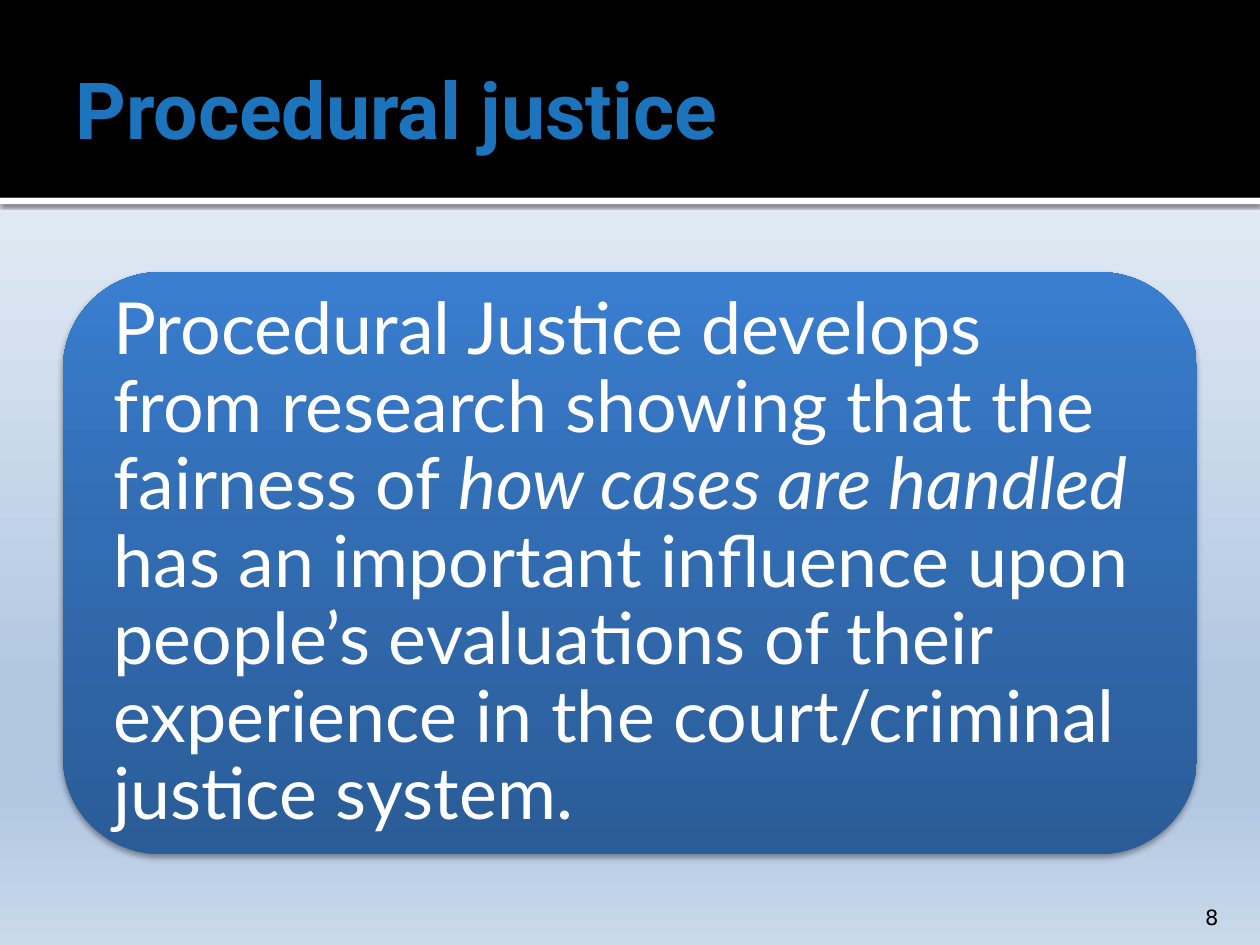
from pptx import Presentation
from pptx.dml.color import RGBColor as Rgb
from pptx.enum.shapes import MSO_SHAPE as Form
from pptx.enum.text import MSO_ANCHOR as Anchor, MSO_AUTO_SIZE as Size, PP_ALIGN as Align
from pptx.oxml import parse_xml
from pptx.oxml.ns import nsdecls, qn
from pptx.util import Inches, Pt


def color(code):
    return Rgb.from_string(code)


class Deck:
    white = "FFFFFF"
    black = "000000"
    blue = "1C75BC"

    def __init__(self):
        self.prs = Presentation()
        self.prs.slide_width = Inches(10)
        self.prs.slide_height = Inches(7.5)
        self.slide = self.prs.slides.add_slide(self.prs.slide_layouts[5])

    def blend(self, fill, node, stops, angle):
        fill.gradient()
        fill.gradient_angle = angle
        marks = "".join(
            f'<a:gs pos="{pos * 1000}"><a:srgbClr val="{code}"/></a:gs>'
            for pos, code in stops
        )
        grad = node.find(".//" + qn("a:gradFill"))
        grad.replace(
            grad.find(qn("a:gsLst")),
            parse_xml(f"<a:gsLst {nsdecls('a')}>{marks}</a:gsLst>"),
        )

    def back(self, stops, angle):
        self.blend(self.slide.background.fill, self.slide.element, stops, angle)

    def shape(self, form, box, fill=None, stops=None, angle=0, shade=None):
        item = self.slide.shapes.add_shape(form, *map(Inches, box))
        item.line.fill.background()
        item.shadow.inherit = False
        if stops:
            self.blend(item.fill, item.element, stops, angle)
        else:
            item.fill.solid()
            item.fill.fore_color.rgb = color(fill)
        if shade:
            alpha, blur, dist = shade
            item.element.spPr.find(qn("a:effectLst")).append(parse_xml(
                f'<a:outerShdw {nsdecls("a")} blurRad="{Pt(blur)}" '
                f'dist="{Pt(dist)}" dir="5400000" algn="t" rotWithShape="0">'
                f'<a:srgbClr val="{self.black}"><a:alpha val="{alpha * 1000}"/>'
                "</a:srgbClr></a:outerShdw>"
            ))

    def fill_text(self, item, runs, font, size, code, pads, anchor=Anchor.MIDDLE,
                  align=Align.LEFT, bold=False, space=1.0):
        frame = item.text_frame
        frame.word_wrap = True
        frame.auto_size = Size.NONE
        frame.vertical_anchor = anchor
        (frame.margin_left, frame.margin_top,
         frame.margin_right, frame.margin_bottom) = map(Inches, pads)
        para = frame.paragraphs[0]
        para.alignment = align
        para.line_spacing = space
        for words, slant in runs:
            run = para.add_run()
            run.text = words
            run.font.name = font
            run.font.size = Pt(size)
            run.font.bold = bold
            run.font.italic = slant
            run.font.color.rgb = color(code)

    def title(self, box, words, **style):
        item = self.slide.shapes.title
        item.left, item.top, item.width, item.height = map(Inches, box)
        item.element.getparent().append(item.element)
        self.fill_text(item, [(words, False)], **style)

    def text(self, box, runs, **style):
        item = self.slide.shapes.add_textbox(*map(Inches, box))
        self.fill_text(item, runs, **style)

    def save(self):
        self.prs.save("out.pptx")


def main():
    deck = Deck()
    deck.back([(0, "F6F9FC"), (74, "B0C6E1"), (83, "B0C6E1"), (100, "CAD9EB")], 270)
    deck.shape(Form.RECTANGLE, (0, 1.57, 10, 0.05), deck.white, shade=(60, 2.5, 0.8))
    deck.shape(Form.RECTANGLE, (0, 0, 10, 1.57), deck.black)
    deck.title((0.5, 0.17, 6.58, 1.37), "Procedural justice", font="Roboto",
               size=45, code=deck.blue, pads=(0.1, 0.05, 0.05, 0.05), bold=True)
    deck.shape(Form.ROUNDED_RECTANGLE, (0.5, 2.16, 9, 4.62), angle=90,
               stops=[(0, "2A5C97"), (55, "326CB2"), (100, "3A7ED0")],
               shade=(38, 3.1, 2))
    deck.text((0.73, 2.39, 8.55, 4.17), [
        ("Procedural Justice develops from research showing that the fairness of ", False),
        ("how cases are handled", True),
        (" has an important influence upon people’s evaluations of their "
         "experience in the court/criminal justice system.", False),
    ], font="Lato", size=41, code=deck.white, pads=(0.17,) * 4, space=0.9)
    deck.text((8.97, 7.08, 0.8, 0.3), [("8", False)], font="DejaVu Sans", size=12,
              code=deck.black, pads=(0.1, 0.05, 0.1, 0), anchor=Anchor.BOTTOM,
              align=Align.RIGHT)
    deck.save()


if __name__ == "__main__":
    main()
